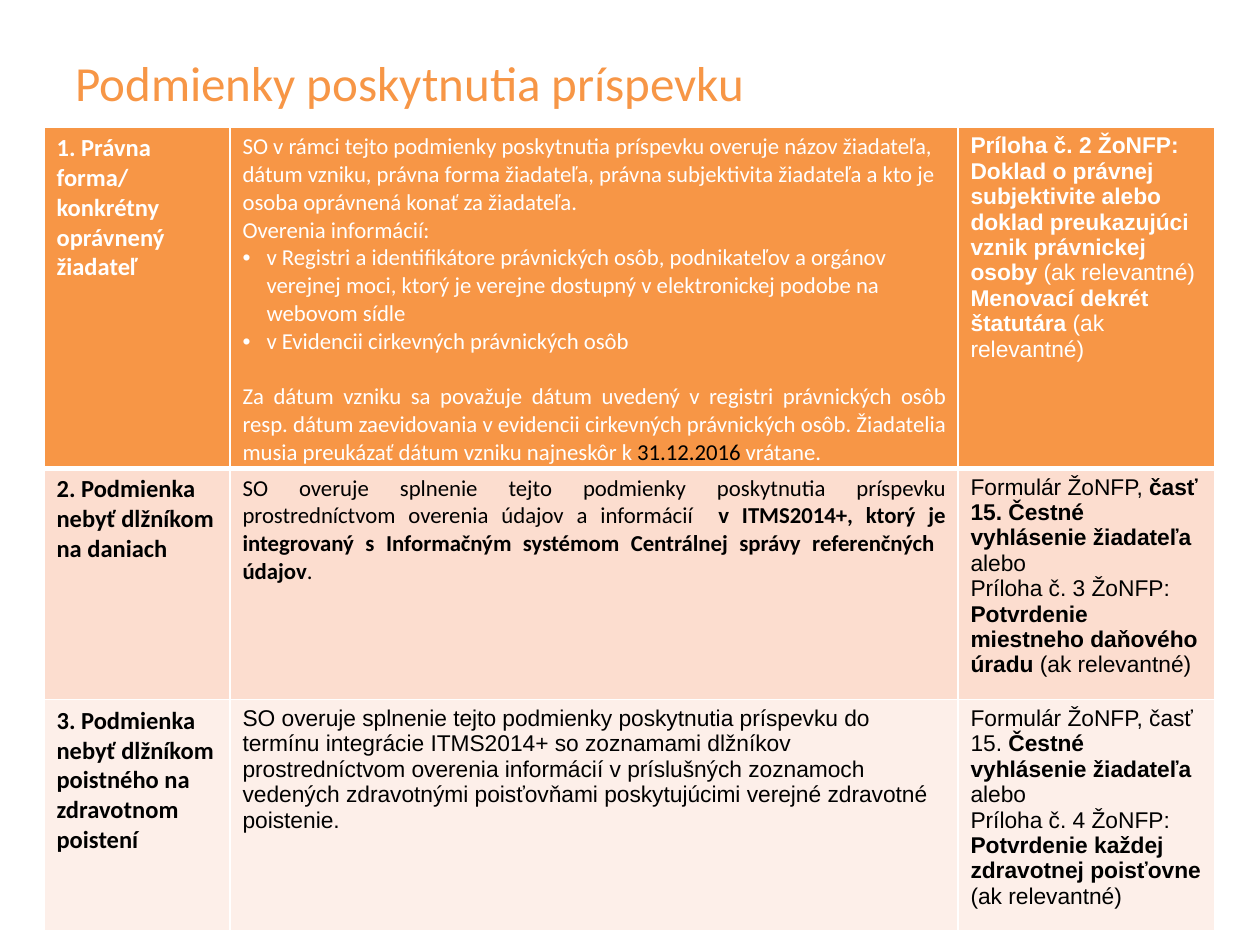
import dataclasses

import pptx
import pptx.dml.color
import pptx.enum.text
import pptx.oxml.ns
import pptx.util
from lxml import etree

EMU_PER_PX = 914400 / 126
JUSTIFY = pptx.enum.text.PP_ALIGN.JUSTIFY


@dataclasses.dataclass(frozen=True)
class Theme:
    accent: str = "F79646"
    light: str = "FCDDCF"
    lighter: str = "FDEFE9"
    white: str = "FFFFFF"
    black: str = "000000"
    heading_font: str = "Calibri"
    plain_font: str = "Arial"
    title_size: int = 28
    label_size: int = 14
    body_size: int = 13
    thin_line: int = 1
    thick_line: int = 3


def px(length):
    return pptx.util.Emu(round(length * EMU_PER_PX))


def rgb(color):
    return pptx.dml.color.RGBColor.from_string(color)


def add_span(para, text, *, font, size, color, bold=False):
    """Append formatted text to a paragraph."""
    run = para.add_run()
    run.text = text
    run.font.name = font
    run.font.size = pptx.util.Pt(size)
    run.font.bold = bold
    run.font.color.rgb = rgb(color)


def bold(text):
    return text, {"bold": True}


@dataclasses.dataclass
class Para:
    spans: list
    align: object = None
    bullet: bool = False
    space_before: int = 0


class Page:
    """The current slide and the style it is drawn in."""

    def __init__(self, deck, theme):
        self.theme = theme
        self.slide = deck.slides.add_slide(deck.slide_layouts[6])

    def add_paras(self, frame, paras, **style):
        frame.word_wrap = True
        for index, content in enumerate(paras):
            para = frame.add_paragraph() if index else frame.paragraphs[0]
            if content.align is not None:
                para.alignment = content.align
            if content.space_before:
                para.space_before = pptx.util.Pt(content.space_before)
            if content.bullet:
                self.add_bullet(para)
            for item in content.spans:
                text, change = (item, {}) if isinstance(item, str) else item
                add_span(para, text, **{**style, **change})

    def add_bullet(self, para):
        properties = para._p.get_or_add_pPr()
        properties.set("marL", str(px(24)))
        properties.set("indent", str(-px(24)))
        font = etree.SubElement(properties, pptx.oxml.ns.qn("a:buFont"))
        font.set("typeface", self.theme.plain_font)
        mark = etree.SubElement(properties, pptx.oxml.ns.qn("a:buChar"))
        mark.set("char", "•")

    def add_title(self, text, left, top, width, height):
        box = self.slide.shapes.add_textbox(px(left), px(top), px(width), px(height))
        box.text_frame.vertical_anchor = pptx.enum.text.MSO_ANCHOR.MIDDLE
        self.add_paras(box.text_frame, [Para([text])], font=self.theme.heading_font,
                       size=self.theme.title_size, color=self.theme.accent)

    def add_borders(self, cell, widths):
        properties = cell._tc.get_or_add_tcPr()
        for index, (side, width) in enumerate(widths.items()):
            line = etree.Element(pptx.oxml.ns.qn(f"a:ln{side}"))
            line.set("w", str(pptx.util.Pt(width)))
            fill = etree.SubElement(line, pptx.oxml.ns.qn("a:solidFill"))
            color = etree.SubElement(fill, pptx.oxml.ns.qn("a:srgbClr"))
            color.set("val", self.theme.white)
            properties.insert(index, line)

    def add_table(self, left, top, columns, heights, rows):
        theme = self.theme
        table = self.slide.shapes.add_table(
            len(heights), len(columns), px(left), px(top),
            px(sum(columns)), px(sum(heights))).table
        for column, width in zip(table.columns, columns):
            column.width = px(width)
        for row, height in zip(table.rows, heights):
            row.height = px(height)
        fills = [theme.accent, theme.light, theme.lighter]
        for r, row in enumerate(rows):
            for c, (paras, font) in enumerate(row):
                cell = table.cell(r, c)
                cell.fill.solid()
                cell.fill.fore_color.rgb = rgb(fills[r])
                # The header row is set off by a thicker line
                self.add_borders(cell, {
                    "L": theme.thin_line, "R": theme.thin_line,
                    "T": theme.thick_line if r == 1 else theme.thin_line,
                    "B": theme.thick_line if r == 0 else theme.thin_line})
                self.add_paras(cell.text_frame, paras, font=font, bold=c == 0,
                               size=theme.body_size if c else theme.label_size,
                               color=theme.black if r else theme.white)


def condition_rows(theme):
    """Condition, how it is verified, and the required attachment."""
    heading, plain = theme.heading_font, theme.plain_font
    relevant = ("(ak relevantné)", {"bold": False})
    return [
        [
            ([Para(["1. Právna forma/ konkrétny oprávnený žiadateľ"])], heading),
            ([
                Para(["SO v rámci tejto podmienky poskytnutia príspevku overuje názov "
                      "žiadateľa, dátum vzniku, právna forma žiadateľa, právna "
                      "subjektivita žiadateľa a kto je osoba oprávnená konať za "
                      "žiadateľa."]),
                Para(["Overenia informácií:"]),
                Para(["v Registri a identifikátore právnických osôb, podnikateľov a "
                      "orgánov verejnej moci, ktorý je verejne dostupný v "
                      "elektronickej podobe na webovom sídle"], bullet=True),
                Para(["v Evidencii cirkevných právnických osôb"], bullet=True),
                Para(["Za dátum vzniku sa považuje dátum uvedený v registri "
                      "právnických osôb resp. dátum zaevidovania v evidencii "
                      "cirkevných právnických osôb. Žiadatelia musia preukázať "
                      "dátum vzniku najneskôr k ",
                      ("31.12.2016", {"color": theme.black}), " vrátane."],
                     align=JUSTIFY, space_before=16),
            ], heading),
            ([
                Para([bold("Príloha č. 2 ŽoNFP:")]),
                Para([bold("Doklad o právnej subjektivite alebo doklad "
                           "preukazujúci vznik právnickej osoby "), relevant]),
                Para([bold("Menovací dekrét štatutára "), relevant]),
            ], plain),
        ],
        [
            ([Para(["2. Podmienka nebyť dlžníkom na daniach"])], heading),
            ([Para(["SO overuje splnenie tejto podmienky poskytnutia príspevku "
                    "prostredníctvom overenia údajov a informácií  ",
                    bold("v ITMS2014+, ktorý je integrovaný s Informačným systémom "
                         "Centrálnej správy referenčných  údajov"), "."],
                   align=JUSTIFY)], heading),
            ([
                Para(["Formulár ŽoNFP, ",
                      bold("časť 15. Čestné vyhlásenie žiadateľa "), "alebo"]),
                Para(["Príloha č. 3 ŽoNFP: ",
                      bold("Potvrdenie miestneho daňového úradu"), " ", relevant]),
            ], plain),
        ],
        [
            ([Para(["3. Podmienka nebyť dlžníkom poistného na zdravotnom "
                    "poistení"])], heading),
            ([Para(["SO overuje splnenie tejto podmienky poskytnutia príspevku do "
                    "termínu integrácie ITMS2014+ so zoznamami dlžníkov "
                    "prostredníctvom overenia informácií v príslušných zoznamoch "
                    "vedených zdravotnými poisťovňami poskytujúcimi verejné "
                    "zdravotné poistenie."])], plain),
            ([
                Para(["Formulár ŽoNFP, časť 15. ",
                      bold("Čestné vyhlásenie žiadateľa "), "alebo"]),
                Para(["Príloha č. 4 ŽoNFP: ",
                      bold("Potvrdenie každej zdravotnej poisťovne"), " ", relevant]),
            ], plain),
        ],
    ]


def main():
    deck = pptx.Presentation()
    deck.slide_width, deck.slide_height = px(1260), px(945)
    theme = Theme()
    page = Page(deck, theme)

    # Title
    page.add_title("Podmienky poskytnutia príspevku", 63, 38, 1134, 87)

    # Table of conditions
    page.add_table(44, 127, columns=[186, 728, 257], heights=[336, 202, 214],
                   rows=condition_rows(theme))
    deck.save("out.pptx")


if __name__ == "__main__":
    main()
